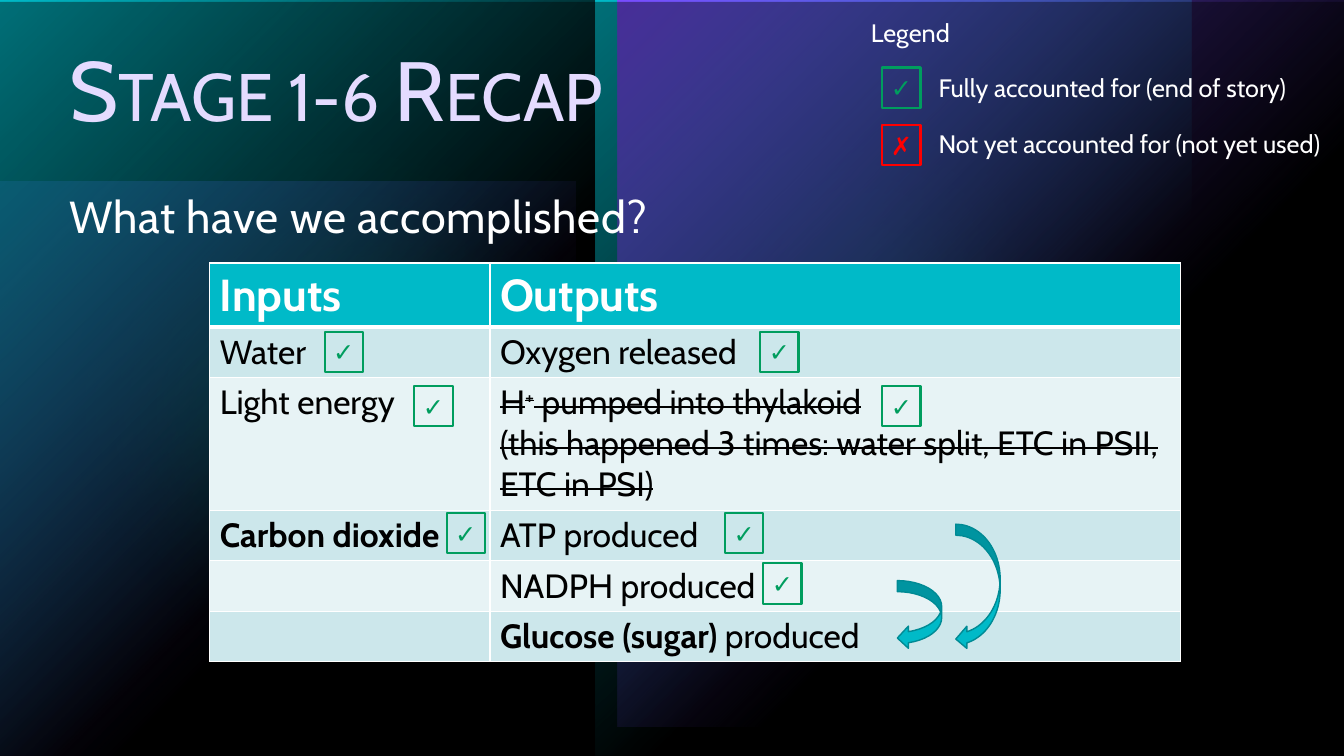
from dataclasses import dataclass

from pptx import Presentation
from pptx.dml.color import RGBColor
from pptx.enum.shapes import MSO_SHAPE
from pptx.enum.text import MSO_ANCHOR, PP_ALIGN
from pptx.oxml import parse_xml
from pptx.oxml.ns import nsdecls
from pptx.util import Inches, Pt

BLACK = RGBColor(0x00, 0x00, 0x00)
WHITE = RGBColor(0xFF, 0xFF, 0xFF)
LAVENDER = RGBColor(0xE4, 0xDB, 0xFF)
PURPLE = RGBColor(0x79, 0x4D, 0xFF)
TEAL = RGBColor(0x00, 0xBA, 0xC8)
DARK_TEAL = RGBColor(0x00, 0x8A, 0x94)
MINT = RGBColor(0x00, 0xD1, 0x7D)
GREEN = RGBColor(0x00, 0x9D, 0x5E)
RED = RGBColor(0xFF, 0x00, 0x00)
BAND_DARK = RGBColor(0xCC, 0xE7, 0xEB)
BAND_LIGHT = RGBColor(0xE7, 0xF3, 0xF5)


@dataclass
class Glow:
    """A background patch, either a corner gradient or a soft flat colour."""
    left: float
    top: float
    width: float
    height: float
    color: RGBColor
    opacity: int = 100
    gradient: bool = True
    preset: MSO_SHAPE = MSO_SHAPE.RECTANGLE


@dataclass
class Mark:
    left: float
    top: float
    symbol: str = "✓"
    color: RGBColor = GREEN
    font: str = "Lato"


@dataclass
class Piece:
    text: str
    bold: bool = False
    strike: bool = False
    baseline: int = 0
    break_before: bool = False


GLOWS = [
    Glow(0, 1.8, 5.71, 5.71, PURPLE, 60),
    Glow(6.29, 0.43, 4.72, 4.72, MINT, 60, False, MSO_SHAPE.OVAL),
    Glow(0, 0.56, 6.94, 6.94, MINT, 20, False, MSO_SHAPE.OVAL),
    Glow(0, 0, 5.91, 7.5, TEAL),
    Glow(5.91, 0, 5.91, 7.5, TEAL),
    Glow(6.13, 0, 7.21, 7.21, PURPLE),
    Glow(0, 0.02, 13.33, 7.5, BLACK, 40, False),
]
MARKS = [
    Mark(3.22, 3.29), Mark(4.11, 3.83), Mark(7.54, 3.29),
    Mark(8.75, 1.24, "✗", RED, "Cabin"), Mark(8.75, 0.67),
    Mark(8.75, 3.83), Mark(7.57, 5.59), Mark(7.19, 5.09), Mark(4.43, 5.09),
]
ARROWS = [(8.9, 5.76, 0.44, 0.68), (9.48, 5.2, 0.44, 1.25)]
COLUMN_WIDTHS = [2.78, 6.85]
ROW_HEIGHTS = [0.63, 0.5, 1.32, 0.5, 0.5, 0.5]
ROWS = [
    ([Piece("Inputs", bold=True)], [Piece("Outputs", bold=True)]),
    ([Piece("Water")], [Piece("Oxygen released")]),
    ([Piece("Light energy")], [
        Piece("H", strike=True),
        Piece("+", strike=True, baseline=30),
        Piece(" pumped into thylakoid", strike=True),
        Piece("(this happened 3 times: water split, ETC in PSII, ETC in PSI)",
              strike=True, break_before=True),
    ]),
    ([Piece("Carbon dioxide", bold=True)], [Piece("ATP produced")]),
    ([], [Piece("NADPH produced")]),
    ([], [Piece("Glucose (sugar)", bold=True), Piece(" produced")]),
]


def add_run(paragraph, text: str, *, size: float, color: RGBColor, font: str = "Cabin",
            bold: bool = False, **attributes: str) -> None:
    """Add formatted text; attributes such as cap or strike go on the run properties."""
    run = paragraph.add_run()
    run.text = text
    run.font.size = Pt(size)
    run.font.name = font
    run.font.bold = bold
    run.font.color.rgb = color
    for name, value in attributes.items():
        run.font._element.set(name, value)


def add_shape(slide, preset: MSO_SHAPE, left: float, top: float, width: float, height: float):
    shape = slide.shapes.add_shape(preset, Inches(left), Inches(top),
                                   Inches(width), Inches(height))
    shape.shadow.inherit = False
    return shape


def add_text_box(slide, left: float, top: float, width: float, height: float):
    box = slide.shapes.add_textbox(Inches(left), Inches(top), Inches(width), Inches(height))
    box.text_frame.word_wrap = True
    return box.text_frame


def add_glow(slide, glow: Glow) -> None:
    shape = add_shape(slide, glow.preset, glow.left, glow.top, glow.width, glow.height)
    shape.line.fill.background()
    shape.fill.solid()
    shape.fill.fore_color.rgb = glow.color
    properties = shape._element.spPr
    solid = properties.find("{*}solidFill")
    if glow.gradient:
        stops = "".join(
            f'<a:gs pos="{position}"><a:srgbClr val="{glow.color}">'
            f'<a:alpha val="{opacity * 1000}"/></a:srgbClr></a:gs>'
            for position, opacity in ((0, glow.opacity), (60000, 0)))
        properties.replace(solid, parse_xml(
            f'<a:gradFill {nsdecls("a")}><a:gsLst>{stops}</a:gsLst><a:path path="circle">'
            '<a:fillToRect r="100000" b="100000"/></a:path></a:gradFill>'))
        return
    solid[0].append(parse_xml(f'<a:alpha {nsdecls("a")} val="{glow.opacity * 1000}"/>'))
    if glow.preset == MSO_SHAPE.OVAL:
        properties.find("{*}effectLst").append(
            parse_xml(f'<a:softEdge {nsdecls("a")} rad="1270000"/>'))


def add_mark(slide, mark: Mark) -> None:
    box = add_shape(slide, MSO_SHAPE.RECTANGLE, mark.left, mark.top, 0.38, 0.4)
    box.fill.background()
    box.line.color.rgb = mark.color
    box.line.width = Pt(1.5)
    frame = box.text_frame
    frame.word_wrap = False
    frame.vertical_anchor = MSO_ANCHOR.MIDDLE
    paragraph = frame.paragraphs[0]
    paragraph.alignment = PP_ALIGN.CENTER
    add_run(paragraph, mark.symbol, size=18, color=mark.color, font=mark.font, bold=True)


def set_borders(cell, bottom_width: float) -> None:
    properties = cell._tc.get_or_add_tcPr()
    widths = {"lnL": 1, "lnR": 1, "lnT": 1, "lnB": bottom_width}
    for index, (side, width) in enumerate(widths.items()):
        properties.insert(index, parse_xml(
            f'<a:{side} {nsdecls("a")} w="{Pt(width)}"><a:solidFill>'
            f'<a:srgbClr val="{WHITE}"/></a:solidFill></a:{side}>'))


def add_recap_table(slide) -> None:
    table = slide.shapes.add_table(
        len(ROWS), len(COLUMN_WIDTHS), Inches(2.08), Inches(2.61),
        Inches(sum(COLUMN_WIDTHS)), Inches(sum(ROW_HEIGHTS))).table
    for column, width in zip(table.columns, COLUMN_WIDTHS):
        column.width = Inches(width)
    for row_index, row in enumerate(ROWS):
        table.rows[row_index].height = Inches(ROW_HEIGHTS[row_index])
        header = row_index == 0
        band = BAND_DARK if row_index % 2 else BAND_LIGHT
        for column_index, pieces in enumerate(row):
            cell = table.cell(row_index, column_index)
            cell.fill.solid()
            cell.fill.fore_color.rgb = TEAL if header else band
            set_borders(cell, 3 if header else 1)
            paragraph = cell.text_frame.paragraphs[0]
            for piece in pieces:
                if piece.break_before:
                    paragraph.add_line_break()
                add_run(paragraph, piece.text, size=32 if header else 24,
                        color=WHITE if header else BLACK, bold=piece.bold,
                        strike="sngStrike" if piece.strike else "noStrike",
                        baseline=str(piece.baseline * 1000))


def add_legend(slide) -> None:
    frame = add_text_box(slide, 8.54, 0.12, 4.79, 1.51)
    lines = [("Legend", 0), ("Fully accounted for (end of story)", 0.67),
             ("Not yet accounted for (not yet used)", 0.67)]
    for index, (text, indent) in enumerate(lines):
        paragraph = frame.add_paragraph() if index else frame.paragraphs[0]
        paragraph.space_after = Pt(18)
        paragraph._p.get_or_add_pPr().set("marL", str(Inches(indent)))
        add_run(paragraph, text, size=18, color=WHITE)


def main() -> None:
    presentation = Presentation()
    presentation.slide_width = Inches(13.33)
    presentation.slide_height = Inches(7.5)
    slide = presentation.slides.add_slide(presentation.slide_layouts[6])
    slide.background.fill.solid()
    slide.background.fill.fore_color.rgb = BLACK
    for glow in GLOWS:
        add_glow(slide, glow)

    title = add_text_box(slide, 0.59, 0.43, 12.14, 1.01)
    title.vertical_anchor = MSO_ANCHOR.MIDDLE
    title.paragraphs[0].line_spacing = 0.9
    add_run(title.paragraphs[0], "Stage 1-6 Recap", size=60, color=LAVENDER, cap="small")

    question = add_text_box(slide, 0.59, 1.69, 12.14, 4.2).paragraphs[0]
    question.line_spacing = 1.25
    question.space_before = Pt(10)
    add_run(question, "What have we accomplished?", size=32, color=WHITE, spc="50")

    add_recap_table(slide)
    add_legend(slide)
    for mark in MARKS:
        add_mark(slide, mark)
    for bounds in ARROWS:
        arrow = add_shape(slide, MSO_SHAPE.CURVED_LEFT_ARROW, *bounds)
        arrow.fill.solid()
        arrow.fill.fore_color.rgb = TEAL
        arrow.line.color.rgb = DARK_TEAL
        arrow.line.width = Pt(1)
    presentation.save("out.pptx")


if __name__ == "__main__":
    main()
